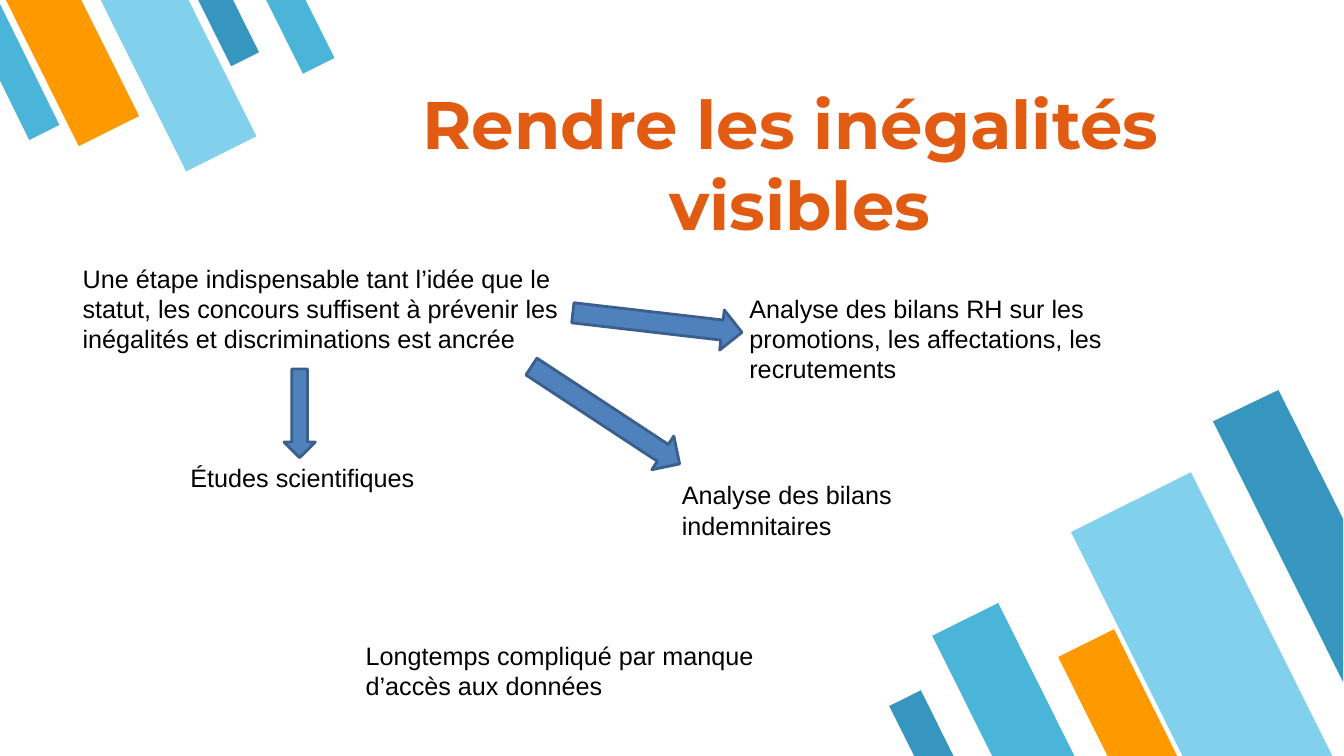
from dataclasses import dataclass
from pptx import Presentation
from pptx.dml.color import RGBColor as RGB
from pptx.enum.shapes import MSO_SHAPE as SHAPE
from pptx.enum.text import MSO_ANCHOR, MSO_AUTO_SIZE as AUTO, PP_ALIGN
from pptx.util import Pt


@dataclass(frozen=True)
class Theme:
    title: RGB = RGB.from_string("E15C12")
    text: RGB = RGB.from_string("000000")
    cyan: RGB = RGB.from_string("4BB5D9")
    sky: RGB = RGB.from_string("81D1EC")
    navy: RGB = RGB.from_string("3796BF")
    orange: RGB = RGB.from_string("FF9900")
    arrow: RGB = RGB.from_string("4F81BD")
    arrow_line: RGB = RGB.from_string("3A5F8C")
    title_font: str = "Montserrat"
    body_font: str = "Arial"
    title_size: int = 48
    body_size: int = 18


T = Theme()


def paint(sp, fill, line=None):
    sp.shadow.inherit = False
    sp.fill.solid()
    sp.fill.fore_color.rgb = fill
    if line is None:
        sp.line.fill.background()
    else:
        sp.line.color.rgb = line
        sp.line.width = Pt(2)


def set_font(p, name, size, color, bold=False):
    p.font.name, p.font.size, p.font.bold = name, Pt(size), bold
    p.font.color.rgb = color


def add_stripes(s, box, rotation, stripes, edge_points, edge_color):
    """Slanted stripes in a corner, plus one cut off by the slide edge."""
    x, y = box
    for dx, dy, w, h, color in stripes:
        sp = s.shapes.add_shape(SHAPE.FLOWCHART_MANUAL_INPUT,
                                Pt(x + dx), Pt(y + dy), Pt(w), Pt(h))
        sp._element.spPr.xfrm.set("flipH", "1")
        sp.rotation = rotation
        paint(sp, color)
    pts = [(Pt(x + dx), Pt(y + dy)) for dx, dy in edge_points]
    builder = s.shapes.build_freeform(*pts[0])
    builder.add_line_segments(pts[1:], close=True)
    paint(builder.convert_to_shape(), edge_color)


def add_title(s, box, text):
    sp = s.shapes.title
    sp.left, sp.top, sp.width, sp.height = map(Pt, box)
    tf = sp.text_frame
    tf.text = text
    tf.word_wrap = False
    tf.auto_size = AUTO.NONE
    tf.vertical_anchor = MSO_ANCHOR.TOP
    p = tf.paragraphs[0]
    p.alignment = PP_ALIGN.CENTER
    set_font(p, T.title_font, T.title_size, T.title, bold=True)


def add_diagram(s, box, notes, arrows):
    """Statement, its consequences and the arrows between them."""
    x, y = box
    for dx, dy, w, h, text in notes:
        tf = s.shapes.add_textbox(Pt(x + dx), Pt(y + dy), Pt(w), Pt(h)).text_frame
        tf.word_wrap = True
        tf.auto_size = AUTO.SHAPE_TO_FIT_TEXT
        tf.text = text
        set_font(tf.paragraphs[0], T.body_font, T.body_size, T.text)
    for kind, dx, dy, w, h, rotation in arrows:
        sp = s.shapes.add_shape(kind, Pt(x + dx), Pt(y + dy), Pt(w), Pt(h))
        sp.rotation = rotation
        paint(sp, T.arrow, T.arrow_line)


def main():
    prs = Presentation()
    prs.slide_width, prs.slide_height = Pt(960.48), Pt(540)
    s = prs.slides.add_slide(prs.slide_layouts[5])

    # Corner stripes: bottom right, then top left
    add_stripes(s, (640, 270), 153.5, [
        (52.6, 165.6, 52.6, 130.3, T.cyan),
        (172.9, 76.3, 95.8, 235.4, T.sky),
        (138.3, 183.6, 44.6, 109.4, T.orange),
        (8, 225.4, 25.2, 61.9, T.navy),
    ], [(273.7, 8.6), (226.9, 31), (320, 217.4), (320, 100.8)], T.navy)
    add_stripes(s, (0, 0), 333.5, [
        (151.2, -12.2, 22.3, 57.6, T.navy),
        (26.6, -21.6, 48.2, 121.7, T.orange),
        (98.6, -23.8, 56.2, 141.1, T.sky),
        (200.9, -13.7, 25.2, 64.1, T.cyan),
    ], [(20.9, 100.1), (42.5, 89.3), (0, 2.9), (0, 57.6)], T.cyan)

    # Title
    add_title(s, (203, 55.4, 737.3, 64.8), "Rendre les inégalités \vvisibles")

    # Diagram
    add_diagram(s, (52, 184), [
        (0, 0.3, 371.5, 72.7, "Une étape indispensable tant l’idée que le statut, "
         "les concours suffisent à prévenir les inégalités et discriminations "
         "est ancrée"),
        (476.5, 21.9, 304.6, 72.7, "Analyse des bilans RH sur les promotions, "
         "les affectations, les recrutements"),
        (428.2, 155.1, 182.2, 51.1, "Analyse des bilans indemnitaires"),
        (77, 142.9, 219.6, 29, "Études scientifiques"),
        (202.2, 269.6, 342.7, 51.1, "Longtemps compliqué par manque d’accès "
         "aux données"),
    ], [
        (SHAPE.RIGHT_ARROW, 357, 32, 121.7, 28.8, 6.6),
        (SHAPE.RIGHT_ARROW, 317.4, 98.2, 126.7, 28.8, 33.3),
        (SHAPE.DOWN_ARROW, 151, 79.5, 22.3, 63.4, 0),
    ])
    prs.save("out.pptx")


if __name__ == "__main__":
    main()
